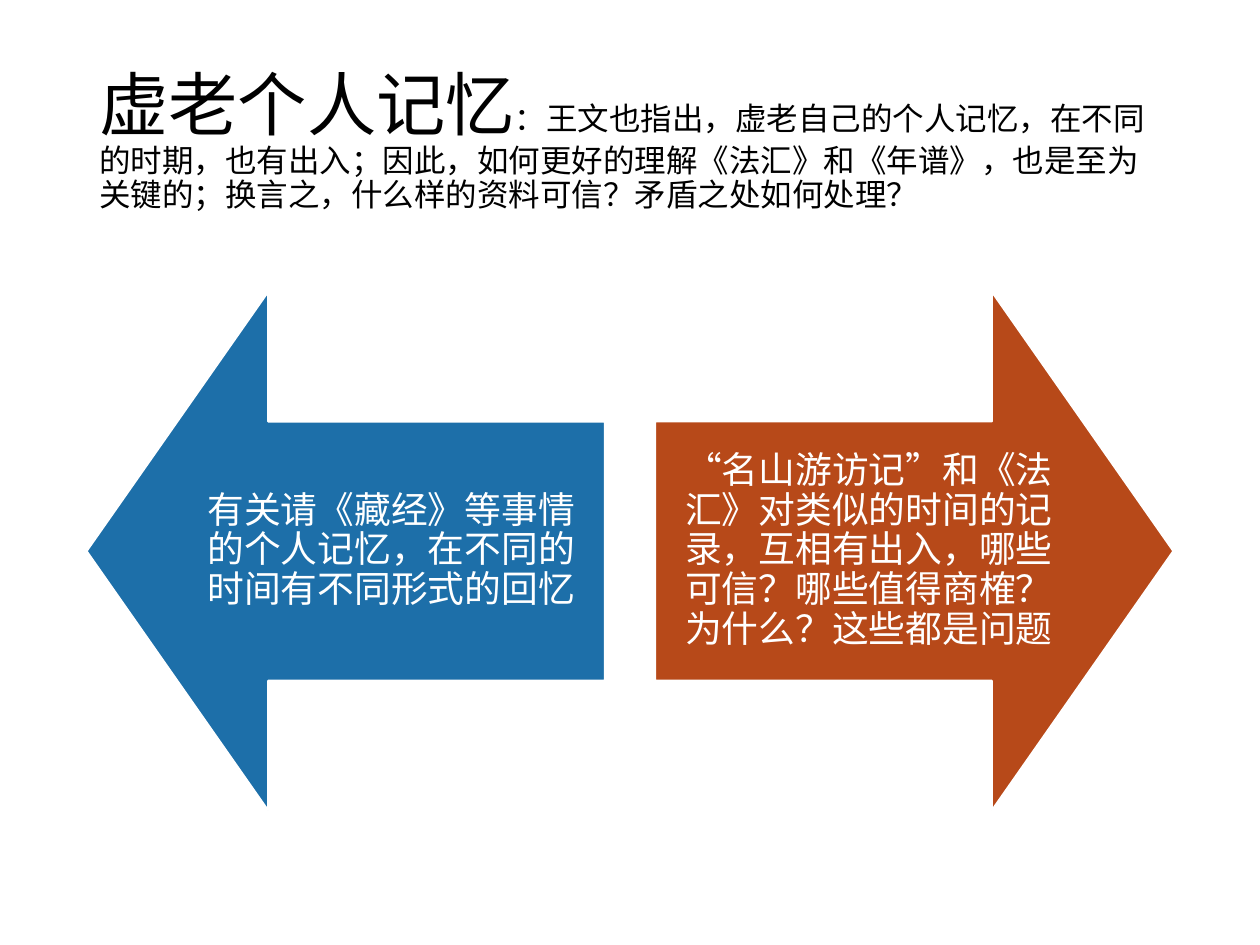
import pptx
import pptx.util
import pptx.dml.color
import pptx.enum.lang
import pptx.enum.shapes
import pptx.enum.text
from pptx.util import Cm

# Content
HEADING = [
    ("虚老个人记忆", 39.6),
    ("：王文也指出，虚老自己的个人记忆，在不同的时期，也有出入；因此，如何更好的理解《法汇》和《年谱》，"
     "也是至为关键的；换言之，什么样的资料可信？矛盾之处如何处理？", 18),
]
ARROWS = [
    {"text": "有关请《藏经》等事情的个人记忆，在不同的时间有不同形式的回忆",
     "color": "blue", "rotation": 270},
    {"text": "“名山游访记”和《法汇》对类似的时间的记录，互相有出入，哪些可信？"
             "哪些值得商榷？为什么？这些都是问题",
     "color": "rust", "rotation": 90},
]
COLORS = {"blue": "1D6FA9", "rust": "B74919", "white": "FFFFFF", "black": "000000"}
FONT = "Times New Roman"

# Layout
PAGE_WIDTH, PAGE_HEIGHT = Cm(25.4), Cm(19.05)
MARGIN = Cm(1.75)
ARROW_SIZE, ARROW_TOP = Cm(10.44), Cm(5.89)
SHAFT, HEAD = 0.5, 0.35
LABEL_WIDTH = int(ARROW_SIZE * (1 - HEAD / 2))
LABEL_HEIGHT = int(ARROW_SIZE * SHAFT)


def rgb(name):
    return pptx.dml.color.RGBColor.from_string(COLORS[name])


def add_text(page, place, spans, color, inset, align):
    box = page.shapes.add_textbox(*place)
    frame = box.text_frame
    frame.word_wrap = True
    frame.vertical_anchor = pptx.enum.text.MSO_ANCHOR.MIDDLE
    frame.margin_left = frame.margin_right = inset[0]
    frame.margin_top = frame.margin_bottom = inset[1]
    para = frame.paragraphs[0]
    para.alignment = align
    para.line_spacing = 0.9
    for text, size in spans:
        span = para.add_run()
        span.text = text
        span.font.size = pptx.util.Pt(size)
        span.font.name = FONT
        span.font.color.rgb = rgb(color)
        span.font.language_id = pptx.enum.lang.MSO_LANGUAGE_ID.SIMPLIFIED_CHINESE


def add_arrow(page, left, arrow):
    shape = page.shapes.add_shape(
        pptx.enum.shapes.MSO_SHAPE.UP_ARROW, left, ARROW_TOP, ARROW_SIZE, ARROW_SIZE)
    shape.adjustments[0], shape.adjustments[1] = SHAFT, HEAD
    shape.rotation = arrow["rotation"]
    shape.shadow.inherit = False
    shape.fill.solid()
    shape.fill.fore_color.rgb = rgb(arrow["color"])
    shape.line.color.rgb = rgb("white")
    shape.line.width = pptx.util.Pt(1)


def main():
    deck = pptx.Presentation()
    deck.slide_width, deck.slide_height = PAGE_WIDTH, PAGE_HEIGHT
    page = deck.slides.add_slide(deck.slide_layouts[6])
    aligns = pptx.enum.text.PP_ALIGN

    # Heading
    add_text(page, (MARGIN, Cm(1.02), PAGE_WIDTH - 2 * MARGIN, Cm(3.68)),
             HEADING, "black", (Cm(0.25), Cm(0.13)), aligns.LEFT)

    # Opposed arrows, each label on the shaft side
    lefts = (MARGIN, PAGE_WIDTH - MARGIN - ARROW_SIZE)
    label_lefts = (lefts[0] + ARROW_SIZE - LABEL_WIDTH, lefts[1])
    label_top = ARROW_TOP + (ARROW_SIZE - LABEL_HEIGHT) // 2
    for arrow, left, label_left in zip(ARROWS, lefts, label_lefts):
        add_arrow(page, left, arrow)
        add_text(page, (label_left, label_top, LABEL_WIDTH, LABEL_HEIGHT),
                 [(arrow["text"], 21)], "white", (Cm(0.41), Cm(0.41)), aligns.CENTER)

    deck.save("out.pptx")


if __name__ == "__main__":
    main()
